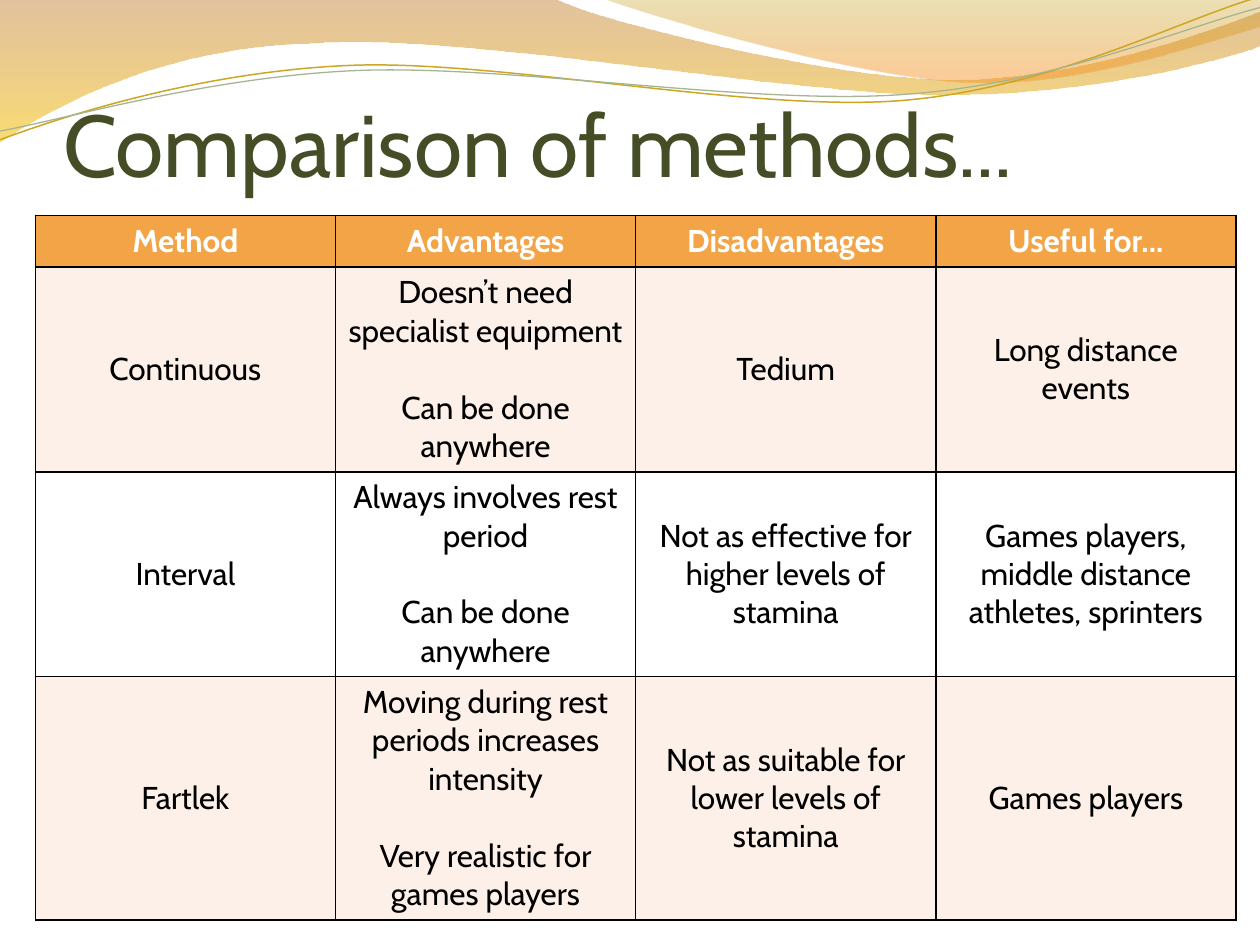
from dataclasses import dataclass
from math import cos, radians, sin

from lxml import etree
from pptx import Presentation
from pptx.dml.color import RGBColor
from pptx.enum.text import MSO_ANCHOR, PP_ALIGN
from pptx.oxml.ns import qn
from pptx.util import Inches, Pt

CENTER, LEFT = PP_ALIGN.CENTER, PP_ALIGN.LEFT
TOP, MIDDLE, BOTTOM = MSO_ANCHOR.TOP, MSO_ANCHOR.MIDDLE, MSO_ANCHOR.BOTTOM


@dataclass(frozen=True)
class Theme:
    font: str = "Cabin"
    title_size: int = 50
    cell_size: int = 18
    paragraph_gap: float = 21.9
    title: str = "444D26"
    header: str = "F3A447"
    band: str = "FDF0E9"
    white: str = "FFFFFF"
    black: str = "000000"
    gold_line: str = "CCA624"
    green_line: str = "A5B592"
    wide_wave: tuple = ((0, "C07A28", 45), (100, "F7BF00", 55))
    right_wave: tuple = ((0, "C09709", 30), (80, "F59320", 45))


THEME = Theme()
LINE_TILT = 357.3

WIDE_BOX = (-0.01, -0.01, 10.02, 1.14)
WIDE_WAVE = [
    (0, 0), (4.4, -0.01),
    (4.76, 0.17, 6.64, 0.63, 7.58, 0.63), (8.53, 0.63, 9.58, 0.26, 10, 0.09),
    (10.01, 0.36),
    (9.83, 0.44, 8.7, 0.76, 7.46, 0.75), (6.22, 0.75, 3.82, 0.28, 2.57, 0.34),
    (1.29, 0.36, 0.46, 0.83, -0.01, 1.13), (0, 0),
]
RIGHT_BOX = (4.79, -0.01, 5.21, 0.7)
RIGHT_WAVE = [
    (4.79, -0.01),
    (5.09, 0.11, 6.82, 0.62, 7.69, 0.65), (8.56, 0.69, 9.61, 0.32, 10, 0.21),
    (10, 0), (4.79, -0.01),
]
GOLD_BOX = (-0.02, 0.22, 10.02, 0.71)
GOLD_CURVE = [
    (0, 1.11),
    (0.48, 0.93, 1.58, 0.57, 2.77, 0.52), (3.95, 0.47, 5.93, 0.89, 7.13, 0.8),
    (8.33, 0.71, 9.38, 0.15, 9.98, -0.02),
]
GREEN_BOX = (-0.02, 0.3, 10.03, 0.58)
GREEN_CURVE = [
    (0, 1.04),
    (0.47, 0.96, 1.64, 0.61, 2.83, 0.56), (4.03, 0.51, 5.97, 0.84, 7.17, 0.75),
    (8.36, 0.67, 9.41, 0.21, 10, 0.06),
]

TABLE_BOX = (0.28, 1.71, 9.53, 5.51)
ROW_HEIGHT = 0.41
METHODS = [
    ["Method", "Advantages", "Disadvantages", "Useful for..."],
    ["Continuous", "Doesn’t need specialist equipment\nCan be done anywhere",
     "Tedium", "Long distance events"],
    ["Interval", "Always involves rest period\nCan be done anywhere",
     "Not as effective for higher levels of stamina",
     "Games players, middle distance athletes, sprinters"],
    ["Fartlek",
     "Moving during rest periods increases intensity\nVery realistic for games players",
     "Not as suitable for lower levels of stamina", "Games players"],
]


def set_attrs(obj, **values):
    for name, value in values.items():
        setattr(obj, name, value)


def format_font(font, size, color, bold=False):
    set_attrs(font, name=THEME.font, size=Pt(size), bold=bold)
    font.color.rgb = RGBColor.from_string(color)


def sub(parent, tag, **attrs):
    return etree.SubElement(parent, qn(tag), {k: str(v) for k, v in attrs.items()})


def local_point(x, y, box, rotation):
    left, top, width, height = box
    dx, dy = x - left - width / 2, y - top - height / 2
    angle = radians(-rotation)
    return (Inches(dx * cos(angle) - dy * sin(angle) + width / 2),
            Inches(dx * sin(angle) + dy * cos(angle) + height / 2))


def add_curve(s, box, segments, close, rotation=0):
    left, top, width, height = map(Inches, box)
    right, bottom = left + width, top + height
    builder = s.shapes.build_freeform(left, top)
    builder.add_line_segments([(right, top), (right, bottom), (left, bottom)], close=close)
    sp = builder.convert_to_shape()
    outline = sp.element.find(".//" + qn("a:path"))
    for child in list(outline):
        outline.remove(child)
    for i, segment in enumerate(segments):
        tag = "a:cubicBezTo" if len(segment) == 6 else "a:lnTo" if i else "a:moveTo"
        step = sub(outline, tag)
        for point in zip(segment[::2], segment[1::2]):
            x, y = local_point(*point, box, rotation)
            sub(step, "a:pt", x=x, y=y)
    if close:
        sub(outline, "a:close")
    sp.rotation = rotation
    sp.shadow.inherit = False
    sp.fill.background()
    s.shapes.title.element.addprevious(sp.element)
    return sp


def add_wave(s, box, segments, stops):
    sp = add_curve(s, box, segments, True)
    sp.line.fill.background()
    no_fill = sp.element.spPr.find(qn("a:noFill"))
    grad = etree.Element(qn("a:gradFill"), rotWithShape="1")
    stop_list = sub(grad, "a:gsLst")
    for position, color, opacity in stops:
        stop = sub(stop_list, "a:gs", pos=position * 1000)
        sub(sub(stop, "a:srgbClr", val=color), "a:alpha", val=opacity * 1000)
    sub(grad, "a:lin", ang=90 * 60000, scaled=0)
    sp.element.spPr.replace(no_fill, grad)


def add_wave_line(s, box, segments, color, width):
    sp = add_curve(s, box, segments, False, LINE_TILT)
    sp.line.color.rgb = RGBColor.from_string(color)
    sp.line.width = Pt(width)


def set_title(s, text):
    title = s.shapes.title
    set_attrs(title, left=Inches(0.5), top=Inches(0.3),
              width=Inches(9), height=Inches(1.25))
    tf = title.text_frame
    set_attrs(tf, text=text, word_wrap=True, vertical_anchor=BOTTOM,
              margin_left=0, margin_top=Inches(0.05), margin_right=0, margin_bottom=0)
    p = tf.paragraphs[0]
    p.alignment = LEFT
    format_font(p.runs[0].font, THEME.title_size, THEME.title)


def add_borders(cell):
    tc_pr = cell._tc.get_or_add_tcPr()
    for i, side in enumerate(("L", "R", "T", "B")):
        line = etree.Element(qn(f"a:ln{side}"), w=str(Pt(1)))
        sub(sub(line, "a:solidFill"), "a:srgbClr", val=THEME.black)
        tc_pr.insert(i, line)


def fill_cell(cell, text, fill, header):
    set_attrs(cell, text=text, vertical_anchor=TOP if header else MIDDLE)
    cell.fill.solid()
    cell.fill.fore_color.rgb = RGBColor.from_string(fill)
    for i, p in enumerate(cell.text_frame.paragraphs):
        p.alignment = CENTER
        if i:
            p.space_before = Pt(THEME.paragraph_gap)
        format_font(p.runs[0].font, THEME.cell_size,
                    THEME.white if header else THEME.black, header)
    add_borders(cell)


def add_methods_table(s):
    left, top, width, height = map(Inches, TABLE_BOX)
    frame = s.shapes.add_table(len(METHODS), len(METHODS[0]), left, top, width, height)
    table = frame.table
    for r, row in enumerate(METHODS):
        table.rows[r].height = Inches(ROW_HEIGHT)
        band = THEME.band if r % 2 else THEME.white
        for c, text in enumerate(row):
            fill_cell(table.cell(r, c), text, band if r else THEME.header, r == 0)
    frame.height = height


def main():
    prs = Presentation()
    set_attrs(prs, slide_width=Inches(10), slide_height=Inches(7.5))
    s = prs.slides.add_slide(prs.slide_layouts[5])
    set_title(s, "Comparison of methods...")
    add_wave(s, WIDE_BOX, WIDE_WAVE, THEME.wide_wave)
    add_wave(s, RIGHT_BOX, RIGHT_WAVE, THEME.right_wave)
    add_wave_line(s, GOLD_BOX, GOLD_CURVE, THEME.gold_line, 0.85)
    add_wave_line(s, GREEN_BOX, GREEN_CURVE, THEME.green_line, 0.75)
    add_methods_table(s)
    prs.save("out.pptx")


if __name__ == "__main__":
    main()
